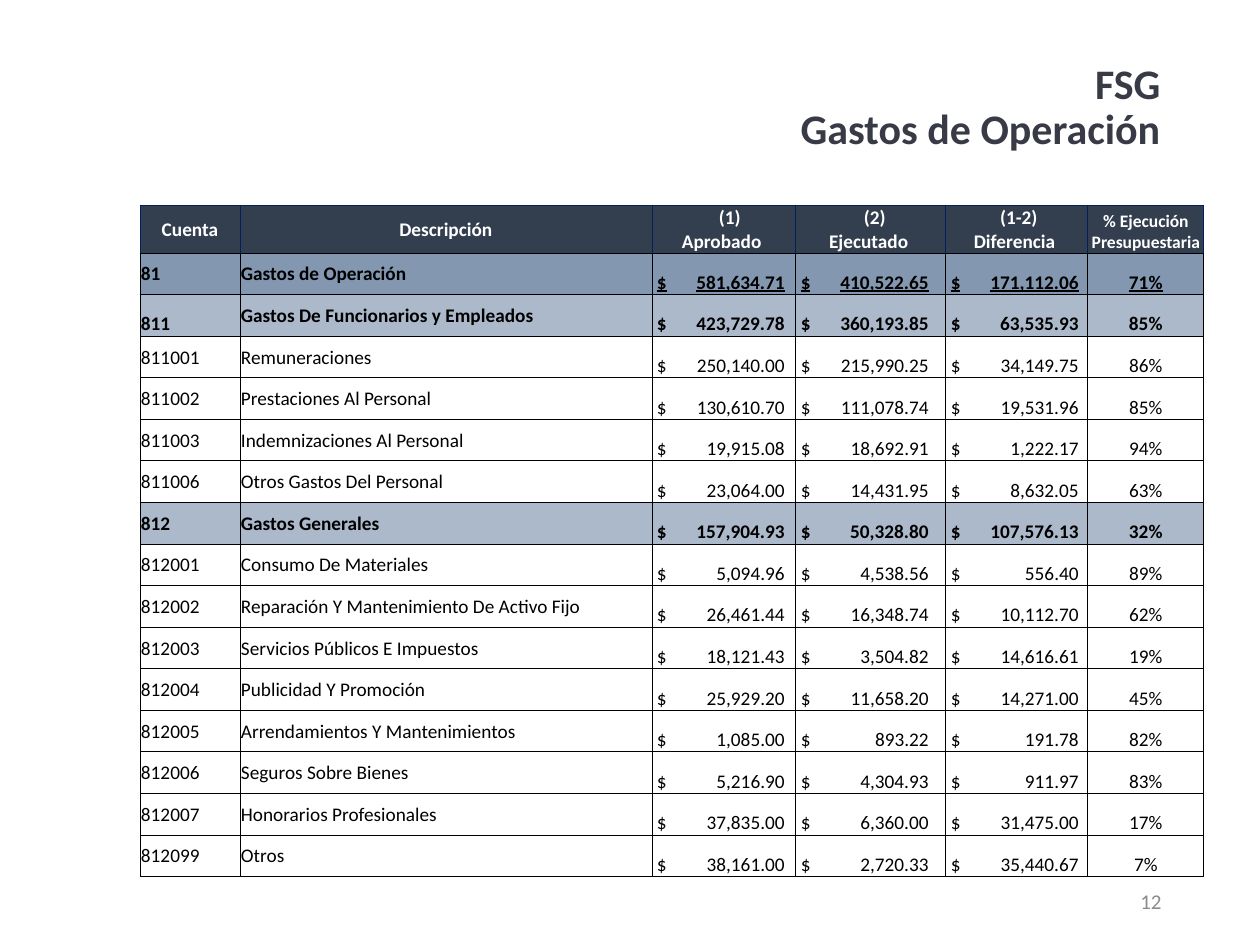
from dataclasses import dataclass

from lxml import etree
from pptx import Presentation
from pptx import util as u
from pptx.dml.color import RGBColor
from pptx.enum import text
from pptx.oxml.ns import qn

EMU_PER_PX = 914400 / 126
FONT = "Calibri"
BLACK, WHITE, NAVY = "000000", "FFFFFF", "002060"
TABLE_HEIGHT, HEADER_HEIGHT = 672, 48
COLUMN_WIDTHS = (100, 412, 144, 150, 142, 116)
AMOUNT_INSET, AMOUNT_TAB = 5, 128
LEFT, CENTER, RIGHT = text.PP_ALIGN.LEFT, text.PP_ALIGN.CENTER, text.PP_ALIGN.RIGHT
MIDDLE, BOTTOM = text.MSO_ANCHOR.MIDDLE, text.MSO_ANCHOR.BOTTOM


@dataclass(frozen=True)
class Heading:
    lines: tuple[str, ...]
    anchor: text.MSO_ANCHOR = BOTTOM
    size: int = 11
    indent: int = 0


@dataclass(frozen=True)
class Account:
    code: str
    description: str
    approved: float
    executed: float

    @property
    def level(self) -> int:
        return len(self.code)

    @property
    def amounts(self) -> tuple[float, float, float]:
        return self.approved, self.executed, self.approved - self.executed

    @property
    def execution(self) -> str:
        return f"{self.executed / self.approved:.0%}"


HEADINGS = (
    Heading(("Cuenta",), MIDDLE),
    Heading(("Descripción",), MIDDLE),
    Heading(("(1)", "Aprobado "), indent=12),
    Heading(("(2)", "Ejecutado "), indent=8),
    Heading(("(1-2)", "Diferencia "), indent=4),
    Heading(("% Ejecución Presupuestaria",), size=10),
)
ACCOUNTS = (
    Account("81", "Gastos de Operación", 581634.71, 410522.65),
    Account("811", "Gastos De Funcionarios y Empleados", 423729.78, 360193.85),
    Account("811001", "Remuneraciones", 250140.00, 215990.25),
    Account("811002", "Prestaciones Al Personal", 130610.70, 111078.74),
    Account("811003", "Indemnizaciones Al Personal", 19915.08, 18692.91),
    Account("811006", "Otros Gastos Del Personal", 23064.00, 14431.95),
    Account("812", "Gastos Generales", 157904.93, 50328.80),
    Account("812001", "Consumo De Materiales", 5094.96, 4538.56),
    Account("812002", "Reparación Y Mantenimiento De Activo Fijo", 26461.44, 16348.74),
    Account("812003", "Servicios Públicos E Impuestos", 18121.43, 3504.82),
    Account("812004", "Publicidad Y Promoción", 25929.20, 11658.20),
    Account("812005", "Arrendamientos Y Mantenimientos", 1085.00, 893.22),
    Account("812006", "Seguros Sobre Bienes", 5216.90, 4304.93),
    Account("812007", "Honorarios Profesionales", 37835.00, 6360.00),
    Account("812099", "Otros", 38161.00, 2720.33),
)
LEVEL_FILLS = {2: "8497B0", 3: "ACB9CA"}


def px(length: float) -> int:
    return round(length * EMU_PER_PX)


def color(value: str) -> RGBColor:
    return RGBColor.from_string(value)


def write(paragraph, content: str, *, size=11, fill=BLACK, bold=False, underline=False,
          align=LEFT, indent=0, tab=0, spacing=None) -> None:
    properties = paragraph._p.get_or_add_pPr()
    if indent:
        properties.set("marL", str(px(indent)))
    if tab:
        stops = etree.SubElement(properties, qn("a:tabLst"))
        etree.SubElement(stops, qn("a:tab"), pos=str(px(tab)), algn="r")
    paragraph.text = content
    paragraph.alignment = align
    if spacing:
        paragraph.line_spacing = spacing
    for run in paragraph.runs:
        run.font.name = FONT
        run.font.size = u.Pt(size)
        run.font.bold = bold
        run.font.underline = underline
        run.font.color.rgb = color(fill)


def style_cell(cell, *, fill=None, anchor=MIDDLE, inset=1, side=BLACK, top=BLACK) -> None:
    cell.margin_left = px(inset)
    cell.margin_right = cell.margin_top = px(1)
    cell.margin_bottom = 0
    cell.vertical_anchor = anchor
    properties = cell._tc.get_or_add_tcPr()
    for edge, shade in (("L", side), ("R", side), ("T", top), ("B", BLACK)):
        line = etree.SubElement(properties, qn(f"a:ln{edge}"), w=str(u.Pt(0.5)))
        solid = etree.SubElement(line, qn("a:solidFill"))
        etree.SubElement(solid, qn("a:srgbClr"), val=shade)
    if fill:
        cell.fill.solid()
        cell.fill.fore_color.rgb = color(fill)
    else:
        cell.fill.background()


def draw_heading(cell, heading: Heading) -> None:
    style_cell(cell, fill="333F4F", anchor=heading.anchor, side=NAVY, top=NAVY)
    frame = cell.text_frame
    for index, line in enumerate(heading.lines):
        paragraph = frame.add_paragraph() if index else frame.paragraphs[0]
        write(paragraph, line, size=heading.size, fill=WHITE, bold=True, align=CENTER,
              indent=0 if index else heading.indent)


def draw_account(cells, account: Account) -> None:
    code, description, *amounts, execution = cells
    fill = LEVEL_FILLS.get(account.level)
    bold = fill is not None
    total = account.level == 2
    style_cell(code, fill=fill, anchor=BOTTOM if account.code == "811" else MIDDLE)
    write(code.text_frame.paragraphs[0], account.code, bold=bold)
    style_cell(description, fill=fill)
    write(description.text_frame.paragraphs[0], account.description, bold=bold)
    for cell, amount in zip(amounts, account.amounts):
        style_cell(cell, fill=fill, anchor=BOTTOM, inset=AMOUNT_INSET)
        write(cell.text_frame.paragraphs[0], f"$\t{amount:,.2f}", bold=bold,
              underline=total, tab=AMOUNT_TAB)
    style_cell(execution, fill=fill, anchor=BOTTOM)
    write(execution.text_frame.paragraphs[0], account.execution, bold=bold,
          underline=total, align=CENTER)


def draw_budget(slide) -> None:
    budget = slide.shapes.add_table(
        len(ACCOUNTS) + 1, len(HEADINGS), px(140), px(205),
        px(sum(COLUMN_WIDTHS)), px(TABLE_HEIGHT)).table
    budget.horz_banding = False
    for column, width in zip(budget.columns, COLUMN_WIDTHS):
        column.width = px(width)
    header, *account_rows = budget.rows
    header.height = px(HEADER_HEIGHT)
    for cell, heading in zip(header.cells, HEADINGS):
        draw_heading(cell, heading)
    for row, account in zip(account_rows, ACCOUNTS):
        row.height = px((TABLE_HEIGHT - HEADER_HEIGHT) / len(ACCOUNTS))
        draw_account(row.cells, account)


def main() -> None:
    deck = Presentation()
    deck.slide_width, deck.slide_height = px(1260), px(945)
    slide = deck.slides.add_slide(deck.slide_layouts[5])

    title = slide.shapes.title
    title.left, title.top, title.width, title.height = px(417), px(52), px(756), px(113)
    title.text_frame.vertical_anchor = MIDDLE
    title.text_frame.auto_size = text.MSO_AUTO_SIZE.NONE
    write(title.text_frame.paragraphs[0], "FSG\vGastos de Operación", size=24,
          fill="383B46", bold=True, align=RIGHT, spacing=0.9)

    page_number = slide.shapes.add_textbox(px(890), px(876), px(284), px(50)).text_frame
    page_number.word_wrap = True
    page_number.vertical_anchor = MIDDLE
    write(page_number.paragraphs[0], "12", size=12, fill="8C8C8C", align=RIGHT)

    draw_budget(slide)
    deck.save("out.pptx")


if __name__ == "__main__":
    main()
